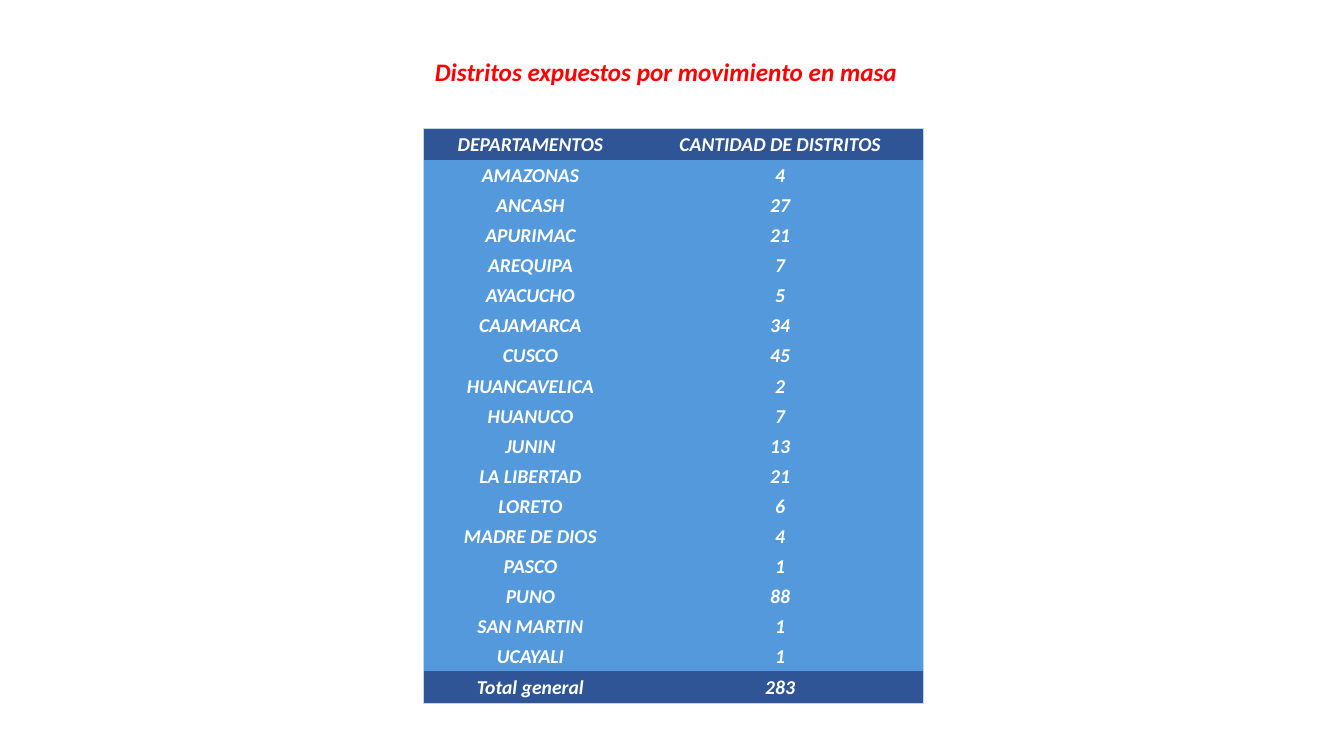
from lxml import etree
from pptx import Presentation
from pptx.dml.color import RGBColor
from pptx.enum.text import MSO_ANCHOR, MSO_AUTO_SIZE, PP_ALIGN
from pptx.oxml.ns import qn
from pptx.util import Pt

CENTER = PP_ALIGN.CENTER
MIDDLE = MSO_ANCHOR.MIDDLE
TOP = MSO_ANCHOR.TOP
FIT_SHAPE = MSO_AUTO_SIZE.SHAPE_TO_FIT_TEXT
RED = RGBColor(0xFF, 0x00, 0x00)
WHITE = RGBColor(0xFF, 0xFF, 0xFF)
NAVY = RGBColor(0x2F, 0x55, 0x97)
BLUE = RGBColor(0x53, 0x99, 0xDB)
PALE = RGBColor(0xC4, 0xD5, 0xEB)

ROWS = [
    ("DEPARTAMENTOS", "CANTIDAD DE DISTRITOS"),
    ("AMAZONAS", 4),
    ("ANCASH", 27),
    ("APURIMAC", 21),
    ("AREQUIPA", 7),
    ("AYACUCHO", 5),
    ("CAJAMARCA", 34),
    ("CUSCO", 45),
    ("HUANCAVELICA", 2),
    ("HUANUCO", 7),
    ("JUNIN", 13),
    ("LA LIBERTAD", 21),
    ("LORETO", 6),
    ("MADRE DE DIOS", 4),
    ("PASCO", 1),
    ("PUNO", 88),
    ("SAN MARTIN", 1),
    ("UCAYALI", 1),
    ("Total general", 283),
]
COLUMN_WIDTHS = (152.6, 204.2)
EDGE_HEIGHT = 23.04
BODY_HEIGHT = 21.47


def write_text(frame, text, size, color):
    para = frame.paragraphs[0]
    para.alignment = CENTER
    span = para.add_run()
    span.text = text
    span.font.name = "Calibri"
    span.font.size = Pt(size)
    span.font.bold = True
    span.font.italic = True
    span.font.color.rgb = color


def add_border(cell, side, visible):
    line = etree.SubElement(cell._tc.get_or_add_tcPr(), qn(f"a:{side}"), w=str(Pt(0.5)))
    if visible:
        fill = etree.SubElement(line, qn("a:solidFill"))
        etree.SubElement(fill, qn("a:srgbClr"), val=str(PALE))
    else:
        etree.SubElement(line, qn("a:noFill"))


deck = Presentation()
deck.slide_width = Pt(960)
deck.slide_height = Pt(540)
page = deck.slides.add_slide(deck.slide_layouts[5])

title = page.shapes.title
title.left, title.top = Pt(303.84), Pt(36.72)
title.width, title.height = Pt(352.8), Pt(28.8)
frame = title.text_frame
frame.word_wrap = False
frame.auto_size = FIT_SHAPE
frame.vertical_anchor = TOP
frame.margin_left, frame.margin_right = Pt(3), Pt(12)
write_text(frame, "Distritos expuestos por movimiento en masa", size=18, color=RED)

last_row = len(ROWS) - 1
table_height = 2 * EDGE_HEIGHT + (len(ROWS) - 2) * BODY_HEIGHT
table = page.shapes.add_table(
    len(ROWS), 2, Pt(302.6), Pt(91.6), Pt(sum(COLUMN_WIDTHS)), Pt(table_height)
).table
table.horz_banding = False
for column, width in zip(table.columns, COLUMN_WIDTHS):
    column.width = Pt(width)

for row_index, values in enumerate(ROWS):
    is_edge = row_index in (0, last_row)
    table.rows[row_index].height = Pt(EDGE_HEIGHT if is_edge else BODY_HEIGHT)
    for column_index, value in enumerate(values):
        cell = table.cell(row_index, column_index)
        cell.vertical_anchor = MIDDLE
        cell.margin_left = cell.margin_right = cell.margin_top = Pt(0.72)
        cell.margin_bottom = Pt(0)
        add_border(cell, "lnL", column_index == 0)
        add_border(cell, "lnR", column_index == 1)
        add_border(cell, "lnT", row_index == 0)
        add_border(cell, "lnB", row_index == last_row)
        cell.fill.solid()
        cell.fill.fore_color.rgb = NAVY if is_edge else BLUE
        write_text(cell.text_frame, str(value), size=14, color=WHITE)

deck.save("out.pptx")
